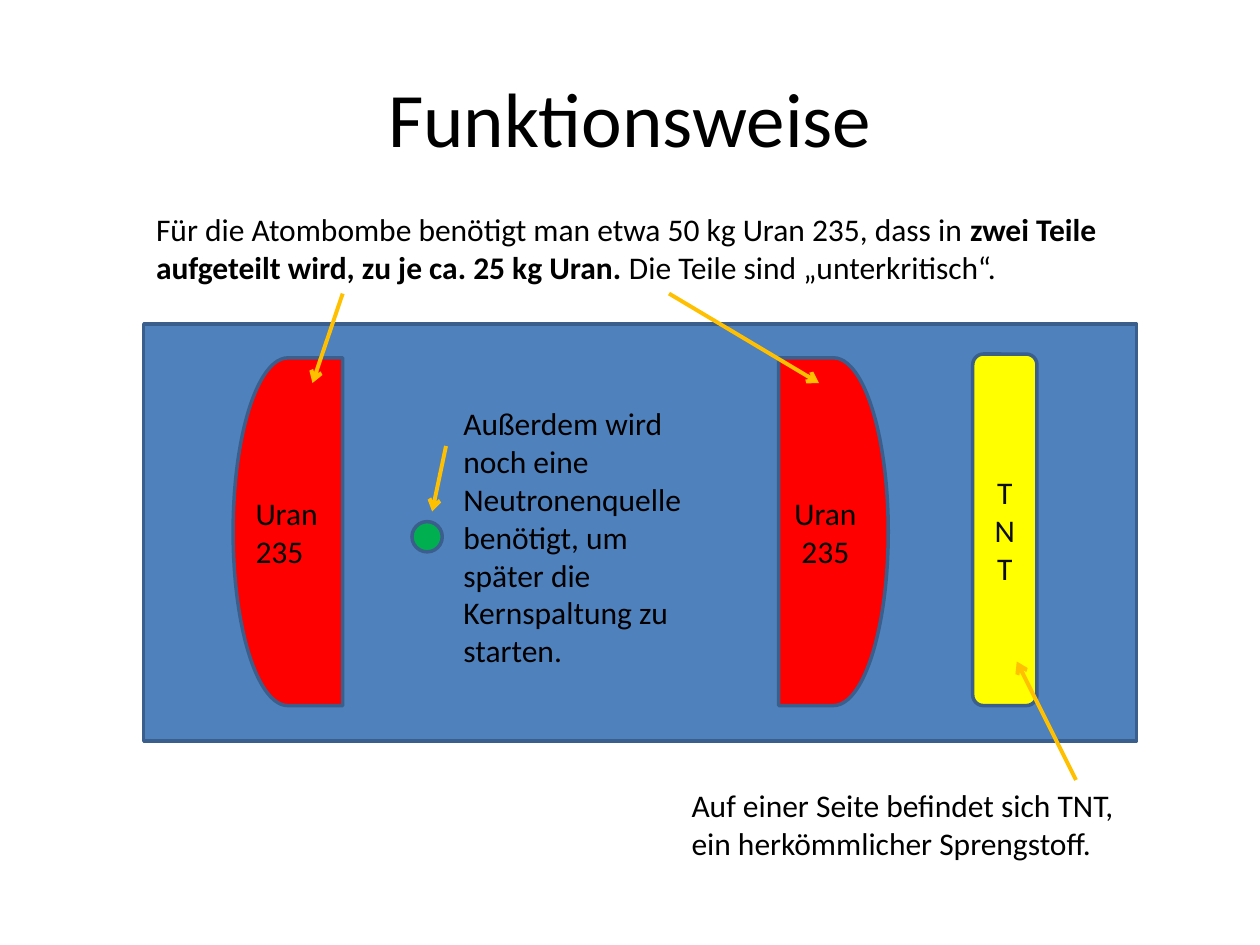
from dataclasses import dataclass

import pptx
import pptx.dml.color
import pptx.enum.shapes
import pptx.enum.text
import pptx.oxml
import pptx.oxml.ns
import pptx.util

SHAPE = pptx.enum.shapes.MSO_SHAPE
ALIGN = pptx.enum.text.PP_ALIGN
ANCHOR = pptx.enum.text.MSO_ANCHOR
CELL = 0.1
FONT = "Calibri"
BLACK, OUTLINE, ORANGE, RED = "000000", "3A5F8C", "FFC000", "FF0000"


@dataclass
class Box:
    col: float
    row: float
    cols: float
    rows: float

    def lengths(self) -> list:
        return [cells(v) for v in (self.col, self.row, self.cols, self.rows)]


@dataclass
class Part:
    kind: SHAPE
    box: Box
    fill: str
    text: str = ""
    color: str = BLACK
    rotation: float = 0


@dataclass
class Note:
    box: Box
    paragraphs: list
    wrap: bool = True


@dataclass
class Arrow:
    start: tuple
    end: tuple


def cells(count: float) -> int:
    return pptx.util.Inches(count * CELL)


def rgb(color: str) -> pptx.dml.color.RGBColor:
    return pptx.dml.color.RGBColor.from_string(color)


def set_font(p, size: float, color: str = BLACK) -> None:
    p.font.name = FONT
    p.font.size = pptx.util.Pt(size)
    p.font.color.rgb = rgb(color)


def draw_part(shapes, part: Part) -> None:
    sp = shapes.add_shape(part.kind, *part.box.lengths())
    sp.shadow.inherit = False
    sp.rotation = part.rotation
    sp.fill.solid()
    sp.fill.fore_color.rgb = rgb(part.fill)
    sp.line.color.rgb = rgb(OUTLINE)
    sp.line.width = pptx.util.Pt(2)
    if part.text:
        tf = sp.text_frame
        tf.word_wrap = True
        tf.vertical_anchor = ANCHOR.MIDDLE
        p = tf.paragraphs[0]
        p.text = part.text
        p.alignment = ALIGN.CENTER
        set_font(p, 18, part.color)


def draw_note(shapes, note: Note) -> None:
    tf = shapes.add_textbox(*note.box.lengths()).text_frame
    tf.word_wrap = note.wrap
    tf.auto_size = pptx.enum.text.MSO_AUTO_SIZE.SHAPE_TO_FIT_TEXT
    for i, runs in enumerate(note.paragraphs):
        p = tf.add_paragraph() if i else tf.paragraphs[0]
        for text, bold in runs:
            r = p.add_run()
            r.text = text
            if bold:
                r.font.bold = True
        set_font(p, 18)


def draw_arrow(shapes, arrow: Arrow) -> None:
    ends = [cells(v) for v in arrow.start + arrow.end]
    line = shapes.add_connector(pptx.enum.shapes.MSO_CONNECTOR.STRAIGHT, *ends)
    line.line.color.rgb = rgb(ORANGE)
    line.line.width = pptx.util.Pt(2.25)
    ns = pptx.oxml.ns.nsdecls("a")
    line.line._get_or_add_ln().append(
        pptx.oxml.parse_xml(f'<a:tailEnd {ns} type="arrow"/>'))
    line._element.spPr.append(pptx.oxml.parse_xml(f"<a:effectLst {ns}/>"))


DRAW = {Part: draw_part, Note: draw_note, Arrow: draw_arrow}


def draw_all(shapes, items: list) -> None:
    for item in items:
        if isinstance(item, list):
            draw_all(shapes.add_group_shape().shapes, item)
        else:
            DRAW[type(item)](shapes, item)


ITEMS = [
    Part(SHAPE.RECTANGLE, Box(11.4, 25.7, 78.8, 33.1), "4F81BD"),
    Part(SHAPE.FLOWCHART_DELAY, Box(61.8, 28.4, 8.7, 27.6), RED, "Uran 235"),
    Part(SHAPE.ROUNDED_RECTANGLE, Box(77.2, 28.1, 5.1, 27.9), "FFFF00", "TNT", "0D0D0D"),
    Part(SHAPE.OVAL, Box(32.7, 41.4, 2.4, 2.4), "00B050"),
    [
        Part(SHAPE.FLOWCHART_DELAY, Box(18.5, 28.4, 8.7, 27.6), RED, rotation=180),
        Note(Box(19.3, 38.7, 7, 7.1), [[("Uran", False)], [("235", False)]], wrap=False),
    ],
    Note(Box(11.4, 16.2, 78.8, 7.1), [[
        ("Für die Atombombe benötigt man etwa 50 kg Uran 235, dass in ", False),
        ("zwei Teile aufgeteilt wird, zu je ca. 25 kg Uran.", True),
        (" Die Teile sind „unterkritisch“.", False),
    ]]),
    Arrow((27.2, 23.3), (24.8, 30.4)),
    Arrow((53.1, 23.3), (65, 30.4)),
    Note(Box(53.9, 61.9, 36.3, 7.1), [[
        ("Auf einer Seite befindet sich TNT, ein herkömmlicher Sprengstoff.", False),
    ]]),
    Arrow((85.4, 61.9), (80.7, 52.5)),
    Note(Box(35.8, 31.6, 19.7, 22.2), [[
        ("Außerdem wird noch eine Neutronenquelle benötigt, um später die "
         "Kernspaltung zu starten.", False),
    ]]),
    Arrow((35.4, 35.4), (34.3, 40.6)),
]


def main() -> None:
    prs = pptx.Presentation()
    prs.slide_width, prs.slide_height = cells(100), cells(75)
    s = prs.slides.add_slide(prs.slide_layouts[5])

    title = s.shapes.title
    title.left, title.top, title.width, title.height = Box(5, 3, 90, 12.5).lengths()
    title.text_frame.vertical_anchor = ANCHOR.MIDDLE
    p = title.text_frame.paragraphs[0]
    p.text = "Funktionsweise"
    p.alignment = ALIGN.CENTER
    set_font(p, 44)

    draw_all(s.shapes, ITEMS)
    prs.save("out.pptx")


if __name__ == "__main__":
    main()
